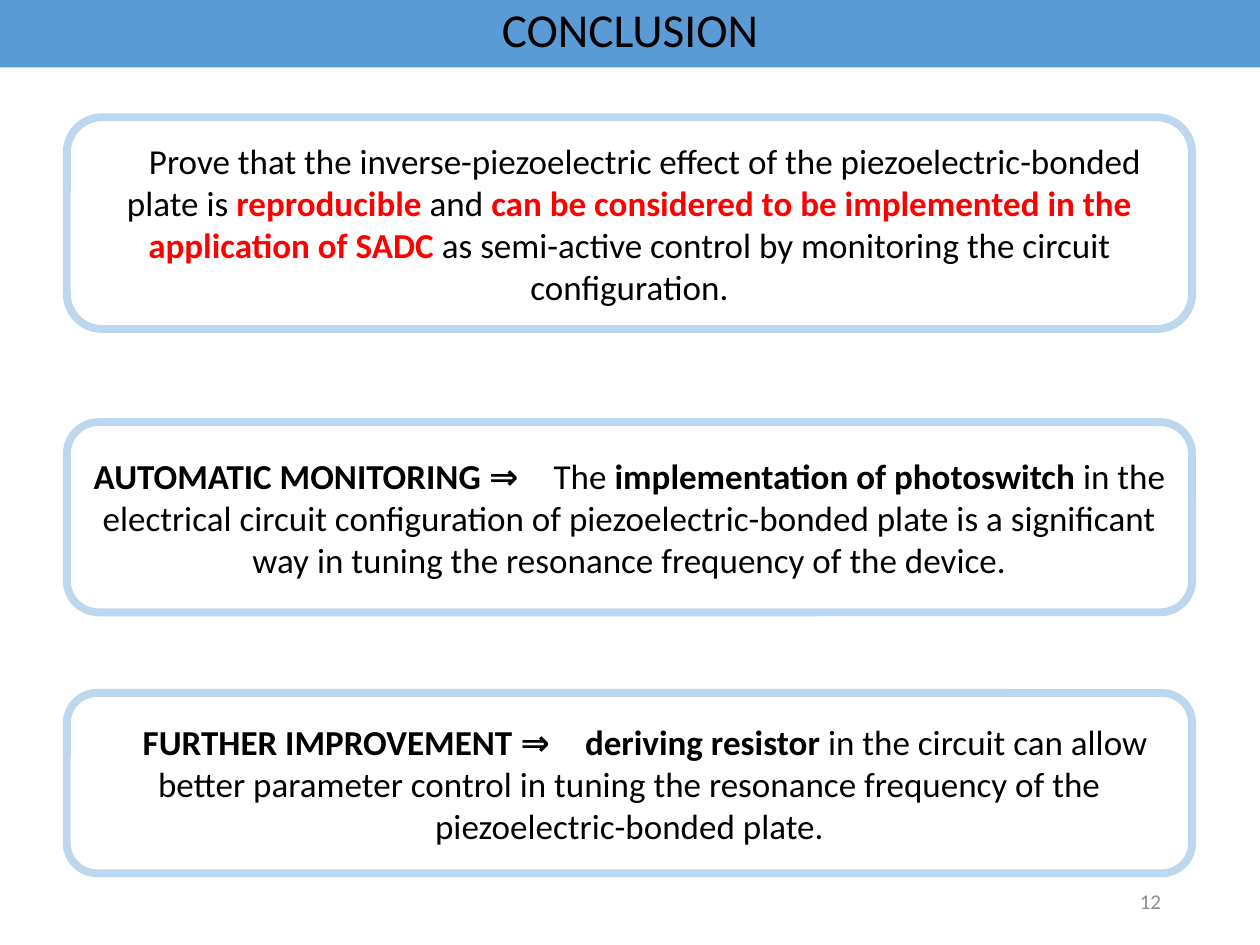
from pptx import Presentation
from pptx.dml.color import RGBColor
from pptx.enum.shapes import MSO_SHAPE
from pptx.enum.text import MSO_ANCHOR, PP_ALIGN
from pptx.util import Pt

RECTANGLE = MSO_SHAPE.RECTANGLE
ROUNDED = MSO_SHAPE.ROUNDED_RECTANGLE
MIDDLE = MSO_ANCHOR.MIDDLE
CENTER = PP_ALIGN.CENTER
RIGHT = PP_ALIGN.RIGHT

FONT = "Calibri"
COLORS = {
    "banner": "5B9BD5",
    "border": "BDD7EE",
    "text": "000000",
    "highlight": "FF0000",
    "number": "8C8C8C",
}
BOX_LEFT, BOX_WIDTH = 38.2, 643

CONCLUSIONS = [
    (67, 121, 18, [
        ("Prove that the inverse-piezoelectric effect of the piezoelectric-bonded plate is ", False, "text"),
        ("reproducible", True, "highlight"),
        (" and ", False, "text"),
        ("can be considered to be implemented in the application of SADC", True, "highlight"),
        (" as semi-active control by monitoring the circuit configuration.", False, "text"),
    ]),
    (241.2, 108.7, 0, [
        ("AUTOMATIC MONITORING ⇒　", True, "text"),
        ("The ", False, "text"),
        ("implementation of photoswitch ", True, "text"),
        ("in the electrical circuit configuration of piezoelectric-bonded plate is a "
         "significant way in tuning the resonance frequency of the device.", False, "text"),
    ]),
    (396, 103, 18, [
        ("FURTHER IMPROVEMENT ⇒　deriving resistor ", True, "text"),
        ("in the circuit can allow better parameter control in tuning the resonance "
         "frequency of the piezoelectric-bonded plate.", False, "text"),
    ]),
]


def rgb(name):
    return RGBColor.from_string(COLORS[name])


def write_text(shape, runs, size=20, align=CENTER, indent=0):
    frame = shape.text_frame
    frame.word_wrap = True
    frame.vertical_anchor = MIDDLE
    paragraph = frame.paragraphs[0]
    paragraph.alignment = align
    if indent:
        paragraph._p.get_or_add_pPr().set("indent", str(Pt(indent)))
    for text, bold, color in runs:
        run = paragraph.add_run()
        run.text = text
        run.font.name = FONT
        run.font.size = Pt(size)
        run.font.bold = bold
        run.font.color.rgb = rgb(color)


def add_banner(slide, title):
    shape = slide.shapes.add_shape(RECTANGLE, Pt(0), Pt(-6), Pt(720), Pt(44.6))
    shape.shadow.inherit = False
    shape.fill.solid()
    shape.fill.fore_color.rgb = rgb("banner")
    shape.line.fill.background()
    write_text(shape, [(title, False, "text")], size=27)


def add_conclusion(slide, top, height, indent, runs):
    shape = slide.shapes.add_shape(ROUNDED, Pt(BOX_LEFT), Pt(top), Pt(BOX_WIDTH), Pt(height))
    shape.shadow.inherit = False
    shape.fill.background()
    shape.line.color.rgb = rgb("border")
    shape.line.width = Pt(4.5)
    write_text(shape, runs, indent=indent)


def add_slide_number(slide, number):
    shape = slide.shapes.add_textbox(Pt(508.5), Pt(500.5), Pt(162), Pt(28.8))
    write_text(shape, [(number, False, "number")], size=12, align=RIGHT)


def main():
    presentation = Presentation()
    presentation.slide_width = Pt(720)
    presentation.slide_height = Pt(540)
    slide = presentation.slides.add_slide(presentation.slide_layouts[6])
    add_banner(slide, "CONCLUSION")
    for top, height, indent, runs in CONCLUSIONS:
        add_conclusion(slide, top, height, indent, runs)
    add_slide_number(slide, "12")
    presentation.save("out.pptx")


if __name__ == "__main__":
    main()
